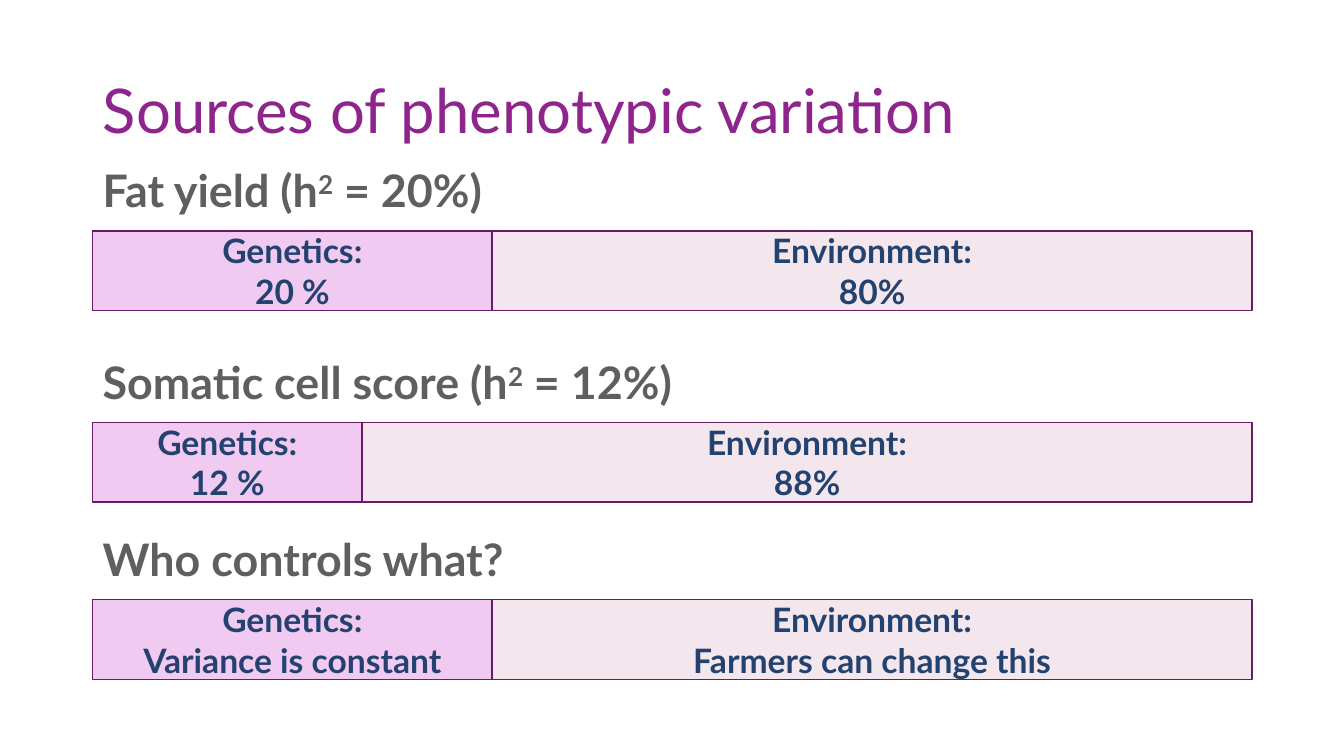
from pptx import Presentation
from pptx.dml.color import RGBColor
from pptx.enum.shapes import MSO_SHAPE
from pptx.enum.text import MSO_ANCHOR, MSO_AUTO_SIZE, PP_ALIGN
from pptx.util import Inches, Pt

TITLE_PURPLE = RGBColor(0x8E, 0x25, 0x8D)
OUTLINE_PURPLE = RGBColor(0x69, 0x1B, 0x68)
GENETICS_PINK = RGBColor(0xF1, 0xCA, 0xF1)
ENVIRONMENT_PINK = RGBColor(0xF3, 0xE7, 0xED)
LABEL_BLUE = RGBColor(0x24, 0x42, 0x70)
HEADING_GREY = RGBColor(0x5F, 0x5F, 0x5F)

LEFT = 0.92
WIDTH = 11.5
HEADING_HEIGHT = 0.64
BAR_OFFSET = 0.72
BAR_HEIGHT = 0.79

# top, heading width, heading parts (every second one raised), genetics width, labels
SECTIONS = [
    (1.57, 4.38, ["Fat yield (h", "2", " = 20%)"], 3.96, "20 %", "80%"),
    (3.47, 6.39, ["Somatic cell score (h", "2", " = 12%)"], 2.67, "12 %", "88%"),
    (5.23, 4.4, ["Who controls what?"], 3.96,
     "Variance is constant", "Farmers can change this"),
]


def format_font(paragraph, size, color, bold=False):
    font = paragraph.font
    font.name = "Lato"
    font.size = Pt(size)
    font.bold = bold
    font.color.rgb = color


def add_title(slide, left, top, width, height):
    title = slide.shapes.title
    title.left, title.top = Inches(left), Inches(top)
    title.width, title.height = Inches(width), Inches(height)
    title.text_frame.vertical_anchor = MSO_ANCHOR.MIDDLE
    paragraph = title.text_frame.paragraphs[0]
    paragraph.text = "Sources of phenotypic variation"
    paragraph.alignment = PP_ALIGN.LEFT
    paragraph.line_spacing = 0.9
    format_font(paragraph, 44, TITLE_PURPLE)


def add_heading(slide, left, top, width, parts):
    box = slide.shapes.add_textbox(
        Inches(left), Inches(top), Inches(width), Inches(HEADING_HEIGHT))
    box.text_frame.word_wrap = False
    box.text_frame.auto_size = MSO_AUTO_SIZE.SHAPE_TO_FIT_TEXT
    paragraph = box.text_frame.paragraphs[0]
    for index, part in enumerate(parts):
        run = paragraph.add_run()
        run.text = part
        if index % 2:
            run._r.get_or_add_rPr().set("baseline", "30000")
    format_font(paragraph, 32, HEADING_GREY, bold=True)


def add_bar(slide, left, top, width, genetics_width, genetics, environment):
    """Add a grouped bar split into a genetics and an environment share."""
    group = slide.shapes.add_group_shape()
    shares = [
        (left, genetics_width, GENETICS_PINK, f"Genetics:\n{genetics}"),
        (left + genetics_width, width - genetics_width, ENVIRONMENT_PINK,
         f"Environment:\n{environment}"),
    ]
    for share_left, share_width, color, label in shares:
        shape = group.shapes.add_shape(
            MSO_SHAPE.RECTANGLE, Inches(share_left), Inches(top),
            Inches(share_width), Inches(BAR_HEIGHT))
        shape.shadow.inherit = False
        shape.fill.solid()
        shape.fill.fore_color.rgb = color
        shape.line.color.rgb = OUTLINE_PURPLE
        shape.line.width = Pt(1)
        shape.text_frame.word_wrap = True
        shape.text_frame.vertical_anchor = MSO_ANCHOR.MIDDLE
        paragraph = shape.text_frame.paragraphs[0]
        paragraph.text = label
        paragraph.alignment = PP_ALIGN.CENTER
        format_font(paragraph, 24, LABEL_BLUE, bold=True)


def main():
    presentation = Presentation()
    presentation.slide_width = Inches(13.33)
    presentation.slide_height = Inches(7.5)
    slide = presentation.slides.add_slide(presentation.slide_layouts[5])
    add_title(slide, LEFT, 0.4, WIDTH, 1.45)
    for top, heading_width, parts, genetics_width, genetics, environment in SECTIONS:
        add_bar(slide, LEFT, top + BAR_OFFSET, WIDTH, genetics_width,
                genetics, environment)
        add_heading(slide, LEFT, top, heading_width, parts)
    presentation.save("out.pptx")


if __name__ == "__main__":
    main()
